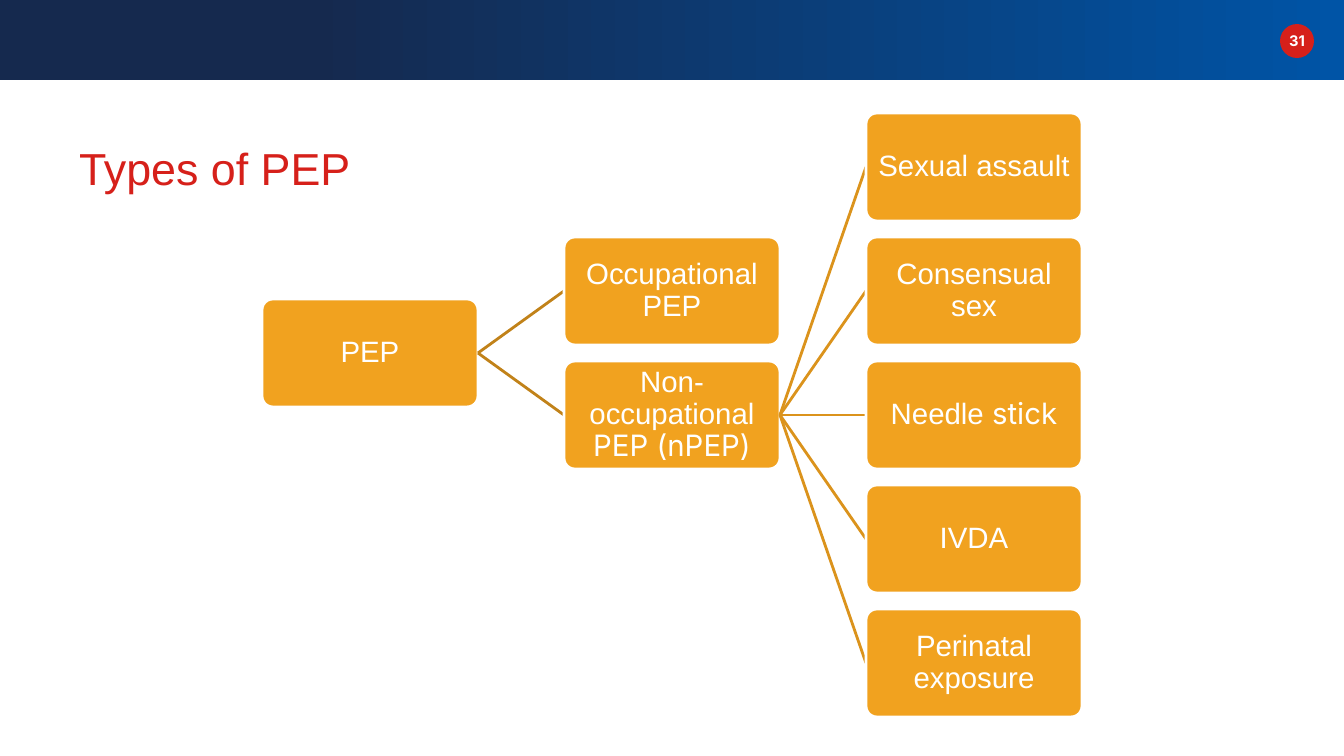
"""Build the slide on types of PEP: a banner, a title and a three-level tree."""
from pptx import Presentation
from pptx.dml.color import RGBColor
from pptx.enum.shapes import MSO_CONNECTOR, MSO_SHAPE
from pptx.enum.text import MSO_ANCHOR, PP_ALIGN
from pptx.oxml.ns import qn
from pptx.util import Pt
from lxml import etree

TITLE = "Types of PEP"
NUMBER = "31"
# name: (parent, column, row, [(text, font), ...])
NODES = {
    "root": (None, 0, 1.5, [("PEP", "Arial")]),
    "work": ("root", 1, 1, [("Occupational PEP", "Arial")]),
    "other": ("root", 1, 2, [("Non-occupational", "Arial"), (" PEP (nPEP)", "Inter")]),
    "assault": ("other", 2, 0, [("Sexual assault", "Arial")]),
    "consent": ("other", 2, 1, [("Consensual sex", "Arial")]),
    "needle": ("other", 2, 2, [("Needle", "Arial"), (" stick", "Inter")]),
    "drug": ("other", 2, 3, [("IVDA", "Arial")]),
    "birth": ("other", 2, 4, [("Perinatal exposure", "Arial")]),
}

WHITE = RGBColor(0xFF, 0xFF, 0xFF)
RED = RGBColor(0xD6, 0x20, 0x1A)
NAVY = RGBColor(0x15, 0x29, 0x4E)
BLUE = RGBColor(0x00, 0x54, 0xA6)
AMBER = RGBColor(0xF1, 0xA2, 0x1F)
LINKS = {1: RGBColor(0xC1, 0x82, 0x19), 2: RGBColor(0xDB, 0x93, 0x1C)}

RECT, OVAL, ROUND = MSO_SHAPE.RECTANGLE, MSO_SHAPE.OVAL, MSO_SHAPE.ROUNDED_RECTANGLE
STRAIGHT = MSO_CONNECTOR.STRAIGHT
MIDDLE = MSO_ANCHOR.MIDDLE
LEFT, CENTER = PP_ALIGN.LEFT, PP_ALIGN.CENTER

LEFT_X, STEP_X = 262, 302
TOP_Y, STEP_Y = 167, 124
BOX_W, BOX_H = 216, 108


def px(*sizes):
    return [round(size * 914400 / 100.8) for size in sizes]


def add_box(slide, kind, *place):
    box = slide.shapes.add_shape(kind, *px(*place))
    box.shadow.inherit = False
    box.line.fill.background()
    return box


def write(shape, parts, size, color, align, inset, bold=False):
    frame = shape.text_frame
    frame.word_wrap = True
    frame.vertical_anchor = MIDDLE
    gap = px(inset)[0]
    frame.margin_left = frame.margin_right = gap
    frame.margin_top = frame.margin_bottom = gap
    para = frame.paragraphs[0]
    para.alignment = align
    for text, face in parts:
        run = para.add_run()
        run.text = text
        run.font.name = face
        run.font.size = Pt(size)
        run.font.bold = bold
        run.font.color.rgb = color
    return para


def add_banner(slide):
    fill = add_box(slide, RECT, 0, 0, 1344, 80).fill
    fill.gradient()
    fill.gradient_angle = 0
    for stop, (pos, color) in zip(fill.gradient_stops, [(0.23, NAVY), (1, BLUE)]):
        stop.position = pos
        stop.color.rgb = color
    badge = add_box(slide, OVAL, 1280, 24, 34, 34)
    badge.fill.solid()
    badge.fill.fore_color.rgb = RED
    write(badge, [(NUMBER, "Inter")], 10.5, WHITE, CENTER, 0, True)


def add_link(slide, start, end, color):
    link = slide.shapes.add_connector(STRAIGHT, *px(*start, *end))
    link.line.color.rgb = color
    link.line.width = Pt(2)
    etree.SubElement(link._element.spPr, qn("a:effectLst"))


def add_node(slide, left, mid, parts):
    box = add_box(slide, ROUND, left, mid - BOX_H / 2, BOX_W, BOX_H)
    box.adjustments[0] = 0.1
    box.fill.solid()
    box.fill.fore_color.rgb = AMBER
    box.line.color.rgb = WHITE
    box.line.width = Pt(2)
    para = write(box, parts, 21, WHITE, CENTER, 1)
    para.line_spacing = 0.9


def add_tree(slide):
    spots = {}
    for name, (parent, col, row, parts) in NODES.items():
        left, mid = LEFT_X + col * STEP_X, TOP_Y + row * STEP_Y
        spots[name] = left, mid
        if parent:
            from_x, from_y = spots[parent]
            add_link(slide, (from_x + BOX_W, from_y), (left, mid), LINKS[col])
        add_node(slide, left, mid, parts)


def main():
    deck = Presentation()
    deck.slide_width, deck.slide_height = px(1344, 756)
    slide = deck.slides.add_slide(deck.slide_layouts[6])
    add_banner(slide)
    title = slide.shapes.add_textbox(*px(69, 132, 1159, 72))
    write(title, [(TITLE, "Arial")], 32, RED, LEFT, 10)
    add_tree(slide)
    deck.save("out.pptx")


if __name__ == "__main__":
    main()
